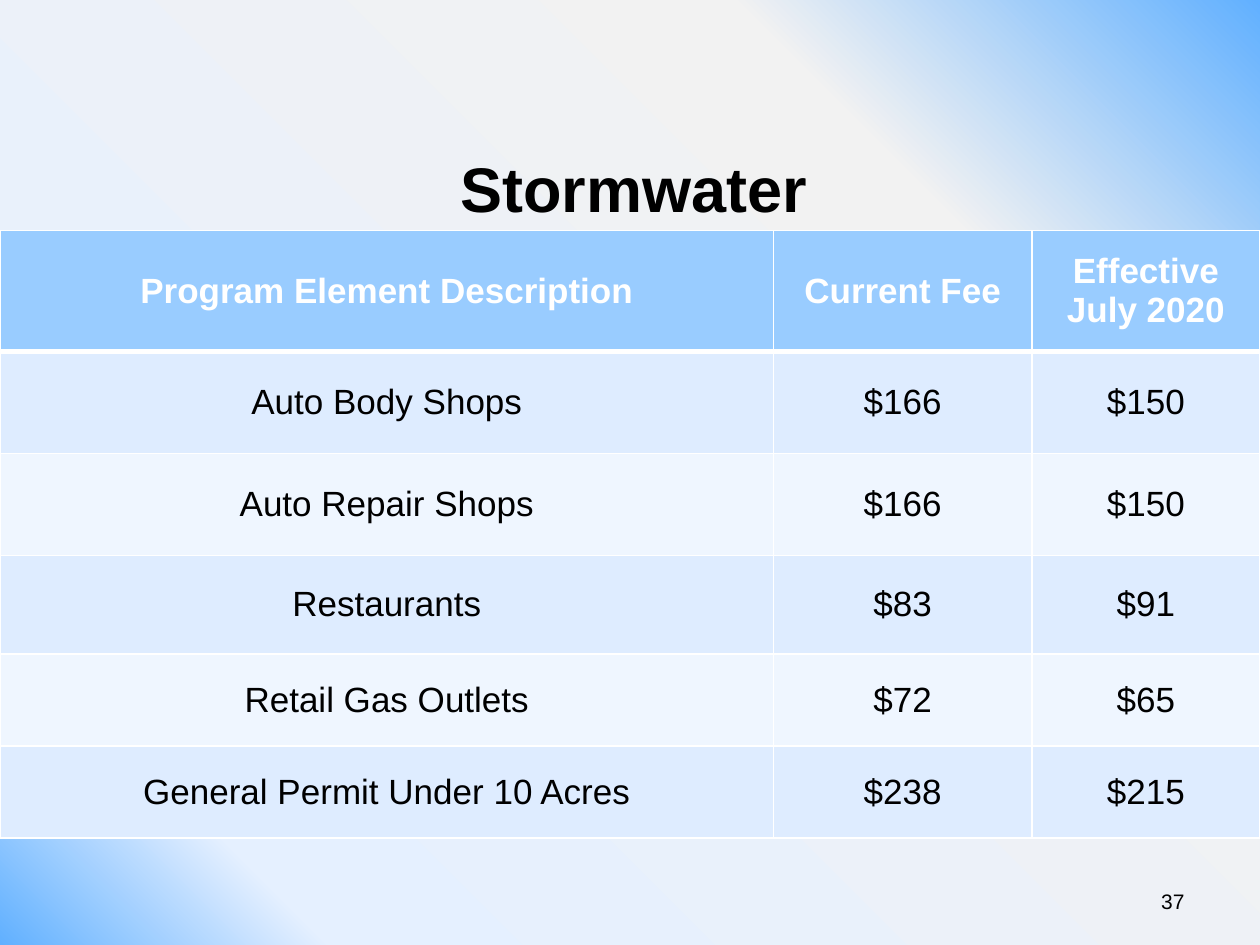
from lxml import etree
from pptx import Presentation
from pptx import util as u
from pptx.dml.color import RGBColor
from pptx.enum import text
from pptx.oxml.ns import qn

FONT = "Arial"
BLACK = RGBColor(0x00, 0x00, 0x00)
WHITE = RGBColor(0xFF, 0xFF, 0xFF)
HEADER = RGBColor(0x99, 0xCC, 0xFF)
BANDS = (RGBColor(0xDE, 0xEC, 0xFF), RGBColor(0xEF, 0xF6, 0xFF))
SKY = RGBColor(0x61, 0xB0, 0xFF)
PALE = RGBColor(0xE5, 0xF0, 0xFF)
GREY = RGBColor(0xF2, 0xF2, 0xF2)
STOPS = ((0, SKY), (15, PALE), (76, GREY), (100, SKY))

COLUMNS = (6.14, 2.05, 1.81)
ROWS = (0.96, 0.81, 0.81, 0.78, 0.73, 0.73)
FEES = (
    ("Program Element Description", "Current Fee", "Effective July 2020"),
    ("Auto Body Shops", "$166", "$150"),
    ("Auto Repair Shops", "$166", "$150"),
    ("Restaurants", "$83", "$91"),
    ("Retail Gas Outlets", "$72", "$65"),
    ("General Permit Under 10 Acres", "$238", "$215"),
)


def set_background(s):
    fill = s.background.fill
    fill.gradient()
    fill.gradient_angle = 45
    stops = s.element.find(".//" + qn("a:gsLst"))
    for stop in list(stops):
        stops.remove(stop)
    for share, color in STOPS:
        stop = etree.SubElement(stops, qn("a:gs"), pos=str(share * 1000))
        etree.SubElement(stop, qn("a:srgbClr"), val=str(color))


def write(tf, words, size, color=BLACK, bold=False,
          align=text.PP_ALIGN.CENTER):
    tf.word_wrap = True
    p = tf.paragraphs[0]
    p.text = words
    p.alignment = align
    p.font.name, p.font.size, p.font.bold = FONT, u.Pt(size), bold
    p.font.color.rgb = color


def place(sp, left, top, width, height):
    sp.left, sp.top = u.Inches(left), u.Inches(top)
    sp.width, sp.height = u.Inches(width), u.Inches(height)


def set_borders(cell, **widths):
    tc_pr = cell._tc.get_or_add_tcPr()
    for side in "LRTB":
        line = etree.SubElement(tc_pr, qn("a:ln" + side),
                                w=str(u.Pt(widths.get(side, 1))))
        fill = etree.SubElement(line, qn("a:solidFill"))
        etree.SubElement(fill, qn("a:srgbClr"), val=str(WHITE))


def add_fee_table(s, left, top):
    frame = s.shapes.add_table(
        len(ROWS), len(COLUMNS), u.Inches(left), u.Inches(top),
        u.Inches(sum(COLUMNS)), u.Inches(sum(ROWS)))
    table = frame.table
    for column, width in zip(table.columns, COLUMNS):
        column.width = u.Inches(width)
    for i, (row, height) in enumerate(zip(table.rows, ROWS)):
        row.height = u.Inches(height)
        is_header = i == 0
        for cell, words in zip(row.cells, FEES[i]):
            # The rule under the header is heavier
            set_borders(cell, T=3 if i == 1 else 1, B=3 if is_header else 1)
            cell.fill.solid()
            cell.fill.fore_color.rgb = HEADER if is_header else BANDS[(i - 1) % 2]
            cell.vertical_anchor = text.MSO_ANCHOR.MIDDLE
            write(cell.text_frame, words, 20,
                  WHITE if is_header else BLACK, is_header)


def main():
    prs = Presentation()
    prs.slide_width, prs.slide_height = u.Inches(10), u.Inches(7.5)
    s = prs.slides.add_slide(prs.slide_layouts[5])
    set_background(s)

    # Title
    title = s.shapes.title
    place(title, 0.53, 0.86, 9, 1.25)
    title.text_frame.vertical_anchor = text.MSO_ANCHOR.MIDDLE
    write(title.text_frame, "Stormwater", 36, bold=True)

    # Page number
    number = s.shapes.add_textbox(0, 0, 0, 0)
    place(number, 7.17, 7, 2.33, 0.34)
    write(number.text_frame, "37", 12, align=text.PP_ALIGN.RIGHT)

    # Fees
    add_fee_table(s, 0, 1.83)
    prs.save("out.pptx")


if __name__ == "__main__":
    main()
